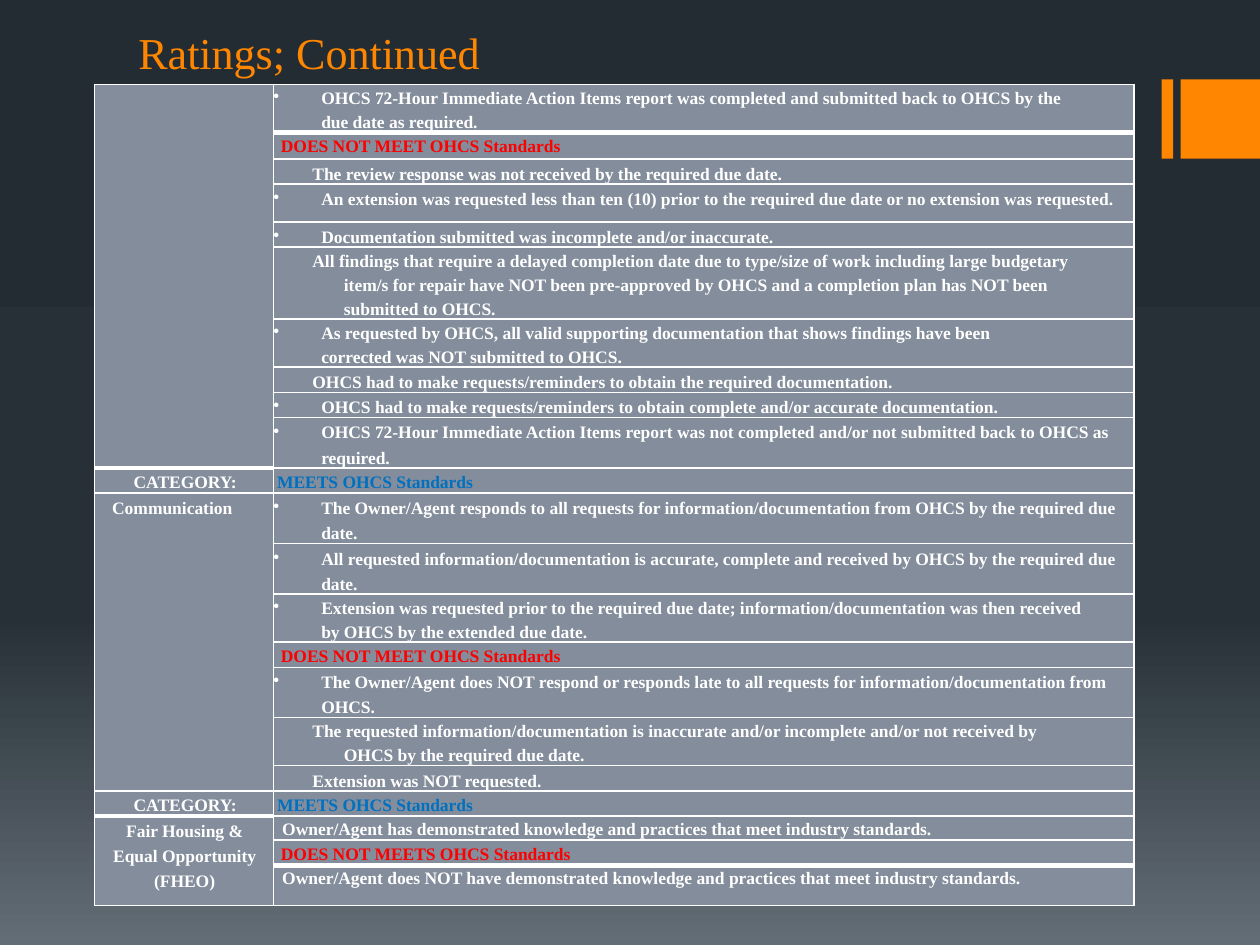
import copy

import pptx
import pptx.util
from pptx.dml.color import RGBColor
from pptx.enum.shapes import MSO_SHAPE
from pptx.enum.text import MSO_ANCHOR, PP_ALIGN
from pptx.oxml import parse_xml
from pptx.oxml.ns import nsdecls, qn

ORANGE = RGBColor(0xFF, 0x86, 0x00)
GREY = RGBColor(0x83, 0x8D, 0x9B)
WHITE = RGBColor(0xFF, 0xFF, 0xFF)
RED = RGBColor(0xFF, 0x00, 0x00)
BLUE = RGBColor(0x00, 0x70, 0xC0)
BACKDROP = [(0, RGBColor(0x24, 0x2C, 0x33)), (0.65, RGBColor(0x27, 0x30, 0x37)),
            (1, RGBColor(0x63, 0x6D, 0x76))]

# Paragraph kinds: left margin, first-line indent (inches), bullet, colour, alignment
KINDS = {
    "bullet": (0.38, -0.38, True, WHITE, PP_ALIGN.LEFT),
    "hanging": (0.56, -0.25, False, WHITE, PP_ALIGN.LEFT),
    "plain": (0.07, 0, False, WHITE, PP_ALIGN.LEFT),
    "fails": (0.06, 0, False, RED, PP_ALIGN.LEFT),
    "meets": (0.03, 0, False, BLUE, PP_ALIGN.LEFT),
    "category": (0.29, 0, False, WHITE, PP_ALIGN.CENTER),
    "topic": (0.14, 0, False, WHITE, PP_ALIGN.LEFT),
    "topic_centred": (0.13, 0, False, WHITE, PP_ALIGN.CENTER),
}

# Standards column: row height (inches), kind, line spacing (pt), right margin (inches), text
STANDARDS = [
    (0.28, "bullet", 13.7, 0.45, "OHCS 72-Hour Immediate Action Items report was completed and submitted back to OHCS by the due date as required."),
    (0.21, "fails", 13.7, 0, "DOES NOT MEET OHCS Standards"),
    (0.2, "hanging", 14.4, 0, "The review response was not received by the required due date."),
    (0.3, "bullet", 14.4, 0, "An extension was requested less than ten (10) prior to the required due date or no extension was requested."),
    (0.2, "bullet", 14.4, 0, "Documentation submitted was incomplete and/or inaccurate."),
    (0.45, "hanging", 13.7, 0.45, "All findings that require a delayed completion date due to type/size of work including large budgetary item/s for repair have NOT been pre-approved by OHCS and a completion plan has NOT been submitted to OHCS."),
    (0.3, "bullet", 13.7, 0.7, "As requested by OHCS, all valid supporting documentation that shows findings have been corrected was NOT submitted to OHCS."),
    (0.2, "hanging", 14.4, 0, "OHCS had to make requests/reminders to obtain the required documentation."),
    (0.2, "bullet", 14.4, 0, "OHCS had to make requests/reminders to obtain complete and/or accurate documentation."),
    (0.3, "bullet", 14.4, 0, "OHCS 72-Hour Immediate Action Items report was not completed and/or not submitted back to OHCS as required."),
    (0.2, "meets", 13.7, 0, "MEETS OHCS Standards"),
    (0.32, "bullet", 14.4, 0, "The Owner/Agent responds to all requests for information/documentation from OHCS by the required due date."),
    (0.3, "bullet", 14.4, 0, "All requested information/documentation is accurate, complete and received by OHCS by the required due date."),
    (0.3, "bullet", 13.7, 0.35, "Extension was requested prior to the required due date; information/documentation was then received by OHCS by the extended due date."),
    (0.2, "fails", 13.7, 0, "DOES NOT MEET OHCS Standards"),
    (0.3, "bullet", 14.4, 0, "The Owner/Agent does NOT respond or responds late to all requests for information/documentation from OHCS."),
    (0.3, "hanging", 13.7, 0.45, "The requested information/documentation is inaccurate and/or incomplete and/or not received by OHCS by the required due date."),
    (0.2, "hanging", 14.4, 0, "Extension was NOT requested."),
    (0.2, "meets", 13.7, 0, "MEETS OHCS Standards"),
    (0.19, "plain", 13.4, 0, "Owner/Agent has demonstrated knowledge and practices that meet industry standards."),
    (0.2, "fails", 13.7, 0, "DOES NOT MEETS OHCS Standards"),
    (0.32, "plain", 13.4, 0, "Owner/Agent does NOT have demonstrated knowledge and practices that meet industry standards."),
]

# Category column: first row, last row, kind, line spacing (pt), right margin (inches), text
CATEGORIES = [
    (0, 9, "plain", 13.7, 0, ""),
    (10, 10, "category", 13.7, 0.27, "CATEGORY:"),
    (11, 17, "topic", 14.4, 0, "Communication"),
    (18, 18, "category", 13.7, 0.27, "CATEGORY:"),
    (19, 21, "topic_centred", 14.4, 0.12, "Fair Housing & Equal Opportunity (FHEO)"),
]

# Heavy borders: (row, column) -> sides
HEAVY = {(0, 0): "B", (9, 0): "B", (10, 0): "T", (18, 0): "B", (19, 0): "T",
         (0, 1): "B", (1, 1): "T", (20, 1): "B", (21, 1): "T"}


class Deck:
    """Style and current slide; positions are columns and rows of a 100 x 75 grid."""
    font = "Times New Roman"
    unit = pptx.util.Inches(0.1)

    def __init__(self):
        self.prs = pptx.Presentation()
        self.prs.slide_width, self.prs.slide_height = 100 * self.unit, 75 * self.unit
        self.s = self.prs.slides.add_slide(self.prs.slide_layouts[6])

    def grid(self, *cells):
        return [round(c * self.unit) for c in cells]

    def background(self, stops):
        fill = self.s.background.fill
        fill.gradient()
        fill.gradient_angle = 270
        gs_list = next(self.s._element.iter(qn("a:gsLst")))
        gs_list.append(copy.deepcopy(gs_list[-1]))
        for stop, (position, color) in zip(fill.gradient_stops, stops):
            stop.position = position
            stop.color.rgb = color

    def bar(self, *box):
        sp = self.s.shapes.add_shape(MSO_SHAPE.RECTANGLE, *self.grid(*box))
        sp.shadow.inherit = False
        sp.fill.solid()
        sp.fill.fore_color.rgb = ORANGE
        sp.line.fill.background()

    def set_text(self, p, text, size, color, bold=False):
        p.text = text
        p.font.name, p.font.size, p.font.bold = self.font, pptx.util.Pt(size), bold
        p.font.color.rgb = color

    def title(self, text, *box):
        tf = self.s.shapes.add_textbox(*self.grid(*box)).text_frame
        tf.word_wrap = True
        tf.vertical_anchor = MSO_ANCHOR.BOTTOM
        self.set_text(tf.paragraphs[0], text, 25.2, ORANGE)

    def table(self, left, top, widths, heights):
        box = self.grid(left, top, sum(widths), sum(heights))
        tbl = self.s.shapes.add_table(len(heights), len(widths), *box).table
        tbl.first_row = tbl.horz_banding = False
        for column, width in zip(tbl.columns, self.grid(*widths)):
            column.width = width
        for row, height in zip(tbl.rows, self.grid(*heights)):
            row.height = height
        return tbl

    def frame(self, cell, heavy=""):
        cell.margin_left = cell.margin_right = cell.margin_top = cell.margin_bottom = 0
        tc_pr = cell._tc.get_or_add_tcPr()
        for side in "LRTB":
            width = pptx.util.Pt(3 if side in heavy else 1)
            tc_pr.append(parse_xml(
                f'<a:ln{side} {nsdecls("a")} w="{width}"><a:solidFill>'
                f'<a:srgbClr val="{WHITE}"/></a:solidFill></a:ln{side}>'))
        cell.fill.solid()
        cell.fill.fore_color.rgb = GREY

    def entry(self, cell, kind, spacing, right, text):
        left, indent, bullet, color, align = KINDS[kind]
        p = cell.text_frame.paragraphs[0]
        p.alignment = align
        p.line_spacing = pptx.util.Pt(spacing)
        p_pr = p._p.get_or_add_pPr()
        for name, value in (("marL", left), ("marR", right), ("indent", indent)):
            p_pr.set(name, str(pptx.util.Inches(value)))
        if bullet:
            p_pr.append(parse_xml(f'<a:buChar {nsdecls("a")} char="•"/>'))
        self.set_text(p, text, 10, color, bold=True)


def main():
    deck = Deck()
    deck.background(BACKDROP)

    # Accent bars and title
    deck.bar(92.2, 6.3, 0.9, 6.3)
    deck.bar(93.7, 6.3, 6.3, 6.3)
    deck.title("Ratings; Continued", 10, 2.5, 80, 4.2)

    # Ratings table
    tbl = deck.table(7.5, 6.7, [14.2, 68.3], [row[0] * 10 for row in STANDARDS])
    for r, (_, *standard) in enumerate(STANDARDS):
        for c in range(2):
            deck.frame(tbl.cell(r, c), HEAVY.get((r, c), ""))
        deck.entry(tbl.cell(r, 1), *standard)
    for first, last, *category in CATEGORIES:
        deck.entry(tbl.cell(first, 0), *category)
        if last > first:
            tbl.cell(first, 0).merge(tbl.cell(last, 0))

    deck.prs.save("out.pptx")


if __name__ == "__main__":
    main()
